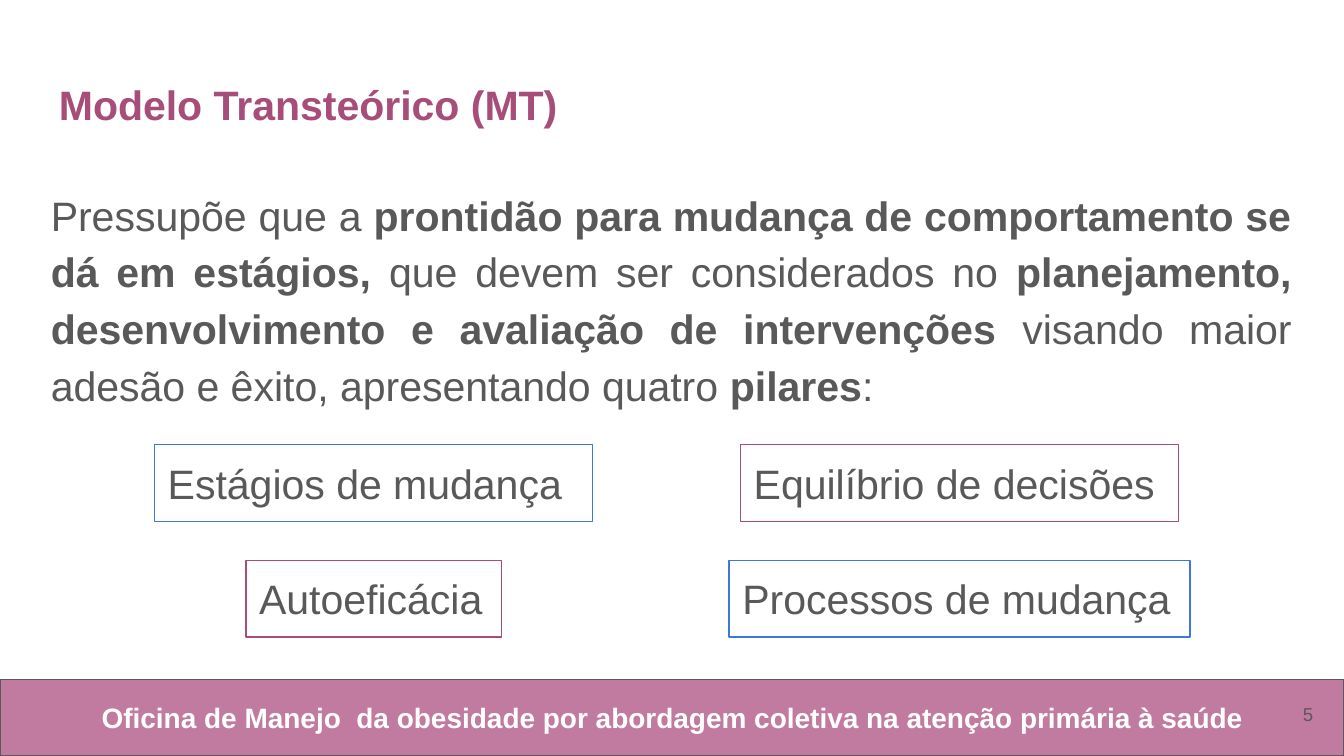
from pptx import Presentation
from pptx.dml.color import RGBColor
from pptx.enum.shapes import MSO_SHAPE
from pptx.enum.text import MSO_ANCHOR, PP_ALIGN
from pptx.util import Inches, Pt

HUES = {
    "gray": "595959",
    "plum": "A64D79",
    "pink": "C27BA0",
    "blue": "3C78D8",
    "white": "FFFFFF",
}
WIDE = 10
HIGH = WIDE * 9 / 16
COLS = (2.78, 7.14)
ROWS = (3.31, 4.17)
TALL = 0.57

PILLARS = [
    ("Estágios de mudança", 0, 0, 3.26, "blue"),
    ("Equilíbrio de decisões", 1, 0, 3.26, "plum"),
    ("Autoeficácia", 0, 1, 1.9, "plum"),
    ("Processos de mudança", 1, 1, 3.43, "blue"),
]

BODY = [
    ("Pressupõe que a ", False),
    ("prontidão para mudança de comportamento se dá em estágios,", True),
    (" que devem ser considerados no ", False),
    ("planejamento, desenvolvimento e avaliação de intervenções", True),
    (" visando maior adesão e êxito, apresentando quatro ", False),
    ("pilares", True),
    (":", False),
]


def hue(name):
    return RGBColor.from_string(HUES[name])


def write(shape, text, size=22, color="gray", bold=False,
          align=PP_ALIGN.LEFT, anchor=MSO_ANCHOR.TOP, space=None):
    frame = shape.text_frame
    frame.word_wrap = True
    frame.vertical_anchor = anchor
    frame.margin_left = frame.margin_right = Inches(0.1)
    frame.margin_top = frame.margin_bottom = Inches(0.1)
    para = frame.paragraphs[0]
    para.alignment = align
    para.line_spacing = space
    runs = [(text, bold)] if isinstance(text, str) else text
    for words, heavy in runs:
        run = para.add_run()
        run.text = words
        run.font.name = "Arial"
        run.font.size = Pt(size)
        run.font.bold = heavy
        run.font.color.rgb = hue(color)


def label(slide, area, text, **style):
    box = slide.shapes.add_textbox(*map(Inches, area))
    write(box, text, **style)


def frame(slide, area, line, fill=None):
    box = slide.shapes.add_shape(MSO_SHAPE.RECTANGLE, *map(Inches, area))
    box.shadow.inherit = False
    if fill:
        box.fill.solid()
        box.fill.fore_color.rgb = hue(fill)
    else:
        box.fill.background()
    box.line.color.rgb = hue(line)
    box.line.width = Pt(0.75)
    return box


def pillar(slide, text, col, row, width, line):
    left = COLS[col] - width / 2
    write(frame(slide, (left, ROWS[row], width, TALL), line), text)


def footer(slide):
    frame(slide, (0, HIGH - TALL, WIDE, TALL), "gray", "pink")
    label(slide, (0.34, 5.11, 9.33, 0.45),
          "Oficina de Manejo  da obesidade por abordagem coletiva na atenção primária à saúde",
          size=15, color="white", bold=True, align=PP_ALIGN.CENTER)
    label(slide, (9.27, 5.1, 0.6, 0.43), "5", size=10,
          align=PP_ALIGN.RIGHT, anchor=MSO_ANCHOR.MIDDLE)


def main():
    deck = Presentation()
    deck.slide_width, deck.slide_height = Inches(WIDE), Inches(HIGH)
    slide = deck.slides.add_slide(deck.slide_layouts[6])
    footer(slide)
    label(slide, (0.34, 0.49, 9.32, 0.63), "Modelo Transteórico (MT)",
          color="plum", bold=True)
    label(slide, (0.28, 1.26, 9.43, 1.91), BODY,
          align=PP_ALIGN.JUSTIFY, space=1.15)
    for item in PILLARS:
        pillar(slide, *item)
    deck.save("out.pptx")


if __name__ == "__main__":
    main()
